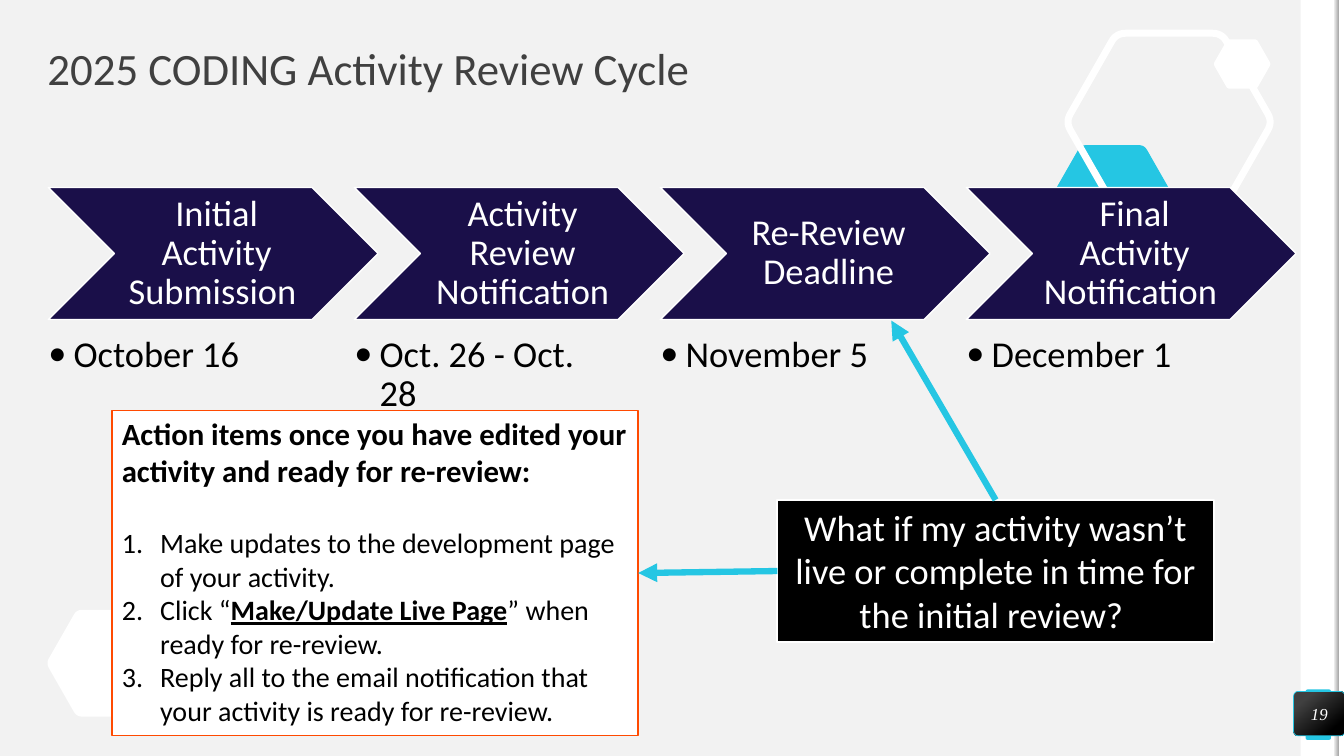
"""Build the activity review cycle slide."""
from lxml.etree import SubElement
from pptx import Presentation
from pptx.dml.color import RGBColor
from pptx.enum.shapes import MSO_CONNECTOR, MSO_SHAPE
from pptx.enum.text import MSO_ANCHOR, PP_ALIGN
from pptx.oxml.ns import qn
from pptx.util import Inches, Pt

TITLE = "2025 CODING Activity Review Cycle"
STAGES = [
    ("Initial Activity Submission ", "October 16"),
    ("Activity Review Notification", "Oct. 26 - Oct. 28"),
    ("Re-Review Deadline", "November 5"),
    ("Final Activity Notification ", "December 1"),
]
QUESTION = "What if my activity wasn’t live or complete in time for the initial review? "
ACTION_HEADING = "Action items once you have edited your activity and ready for re-review:"
ACTIONS = [
    [("Make updates to the development page of your activity.", False)],
    [("Click “", False), ("Make/Update Live Page", True), ("” when ready for re-review.", False)],
    [("Reply all to the email notification that your activity is ready for re-review.", False)],
]
PAGE_NUMBER = "19"

COLORS = {
    "page": "F2F2F2", "white": "FFFFFF", "black": "000000", "cyan": "25C6E3",
    "navy": "1A0F49", "orange": "FF4A01", "title": "404040", "edge": "A6A6A6",
}
HEXAGONS = [
    (0.47, 6.05, 1.21, 1.06, "white", None),
    (10.43, 1.44, 1.21, 1.06, "cyan", None),
    (10.59, 0.33, 2.01, 1.76, None, ("white", 5)),
    (12.04, 0.39, 0.56, 0.49, "white", None),
]
HEXAGON_CORNERS = [(0.24, 0), (0.76, 0), (1.01, 0.5), (0.76, 1), (0.24, 1), (-0.01, 0.5)]
CORNER_CUT = 0.09
CURVE_STEPS = 6

WIDTH, HEIGHT = 13.33, 7.5
STAGE_LEFT, STAGE_TOP, STAGE_STEP = 0.48, 1.86, 3.035
STAGE_WIDTH, STAGE_HEIGHT = 3.27, 1.31
DATE_TOP, DATE_WIDTH, DATE_HEIGHT = 3.33, 2.62, 0.51
NO_INSETS = (0, 0, 0, 0)

deck = Presentation()
deck.slide_width, deck.slide_height = Inches(WIDTH), Inches(HEIGHT)
slide = deck.slides.add_slide(deck.slide_layouts[6])
slide.background.fill.solid()
slide.background.fill.fore_color.rgb = RGBColor.from_string(COLORS["page"])


def paint(shape, fill=None, line=None):
    shape.shadow.inherit = False
    if isinstance(fill, tuple):
        angle, *stops = fill
        shape.fill.gradient()
        shape.fill.gradient_angle = angle
        for stop, (color, position) in zip(shape.fill.gradient_stops, stops):
            stop.color.rgb = RGBColor.from_string(COLORS[color])
            stop.position = position
    elif fill:
        shape.fill.solid()
        shape.fill.fore_color.rgb = RGBColor.from_string(COLORS[fill])
    else:
        shape.fill.background()
    if line:
        shape.line.color.rgb = RGBColor.from_string(COLORS[line[0]])
        shape.line.width = Pt(line[1])
    else:
        shape.line.fill.background()


def add_box(kind, bounds, fill, line=None, corner=None):
    shape = slide.shapes.add_shape(kind, *map(Inches, bounds))
    if corner is not None:
        shape.adjustments[0] = corner
    paint(shape, fill, line)
    return shape


def add_label(bounds):
    return slide.shapes.add_textbox(*map(Inches, bounds))


def set_frame(shape, anchor=MSO_ANCHOR.TOP, insets=(0.1, 0.05, 0.1, 0.05)):
    frame = shape.text_frame
    frame.word_wrap = True
    frame.vertical_anchor = anchor
    frame.margin_left, frame.margin_top, frame.margin_right, frame.margin_bottom = map(Inches, insets)
    return frame


def write(paragraph, text, size, color="black", font="Calibri", bold=False, italic=False, underline=False):
    run = paragraph.add_run()
    run.text = text
    run.font.name, run.font.size = font, Pt(size)
    run.font.bold, run.font.italic, run.font.underline = bold, italic, underline
    run.font.color.rgb = RGBColor.from_string(COLORS[color])


def add_marker(paragraph, indent, tag, **attributes):
    properties = paragraph._p.get_or_add_pPr()
    properties.set("marL", str(Inches(indent)))
    properties.set("indent", str(-Inches(indent)))
    SubElement(properties, qn("a:buFont"), typeface="Calibri")
    SubElement(properties, qn(tag), attributes)


def hexagon_outline(left, top, width, height):
    points = []
    for index, corner in enumerate(HEXAGON_CORNERS):
        before = HEXAGON_CORNERS[index - 1]
        after = HEXAGON_CORNERS[(index + 1) % len(HEXAGON_CORNERS)]
        for step in range(CURVE_STEPS + 1):
            t = step / CURVE_STEPS
            x, y = (
                c + CORNER_CUT * ((1 - t) ** 2 * (b - c) + t ** 2 * (a - c))
                for b, c, a in zip(before, corner, after)
            )
            points.append((Inches(left + x * width), Inches(top + y * height)))
    return points


def add_arrow(start, end):
    arrow = slide.shapes.add_connector(MSO_CONNECTOR.STRAIGHT, *map(Inches, start + end))
    arrow.line.color.rgb = RGBColor.from_string(COLORS["cyan"])
    arrow.line.width = Pt(4.5)
    SubElement(arrow.line._get_or_add_ln(), qn("a:tailEnd"), type="triangle")
    SubElement(arrow._element.spPr, qn("a:effectLst"))
    return arrow


add_box(MSO_SHAPE.RECTANGLE, (12.9, 0, 0.39, HEIGHT), "white")
add_box(MSO_SHAPE.ROUNDED_RECTANGLE, (12.95, 6.84, 0.25, 0.5), "cyan", corner=0.07)
add_box(MSO_SHAPE.RECTANGLE, (13.28, 0, 0.05, HEIGHT), "white")
add_box(MSO_SHAPE.RECTANGLE, (13.23, 0, 0.05, HEIGHT), (0, ("page", 0), ("edge", 1)))
for *bounds, fill, line in HEXAGONS:
    first, *others = hexagon_outline(*bounds)
    builder = slide.shapes.build_freeform(*first)
    builder.add_line_segments(others, close=True)
    paint(builder.convert_to_shape(), fill, line)

title = set_frame(add_label((0.47, 0.47, 12.39, 0.47)), MSO_ANCHOR.MIDDLE, NO_INSETS).paragraphs[0]
title.line_spacing = 0.9
write(title, TITLE, 32, "title")

for column, (stage, date) in enumerate(STAGES):
    left = STAGE_LEFT + column * STAGE_STEP
    chevron = add_box(MSO_SHAPE.CHEVRON, (left, STAGE_TOP, STAGE_WIDTH, STAGE_HEIGHT), "navy", ("white", 1))
    heading = set_frame(chevron, MSO_ANCHOR.MIDDLE, (0.11, 0.04, 0.04, 0.04)).paragraphs[0]
    heading.alignment = PP_ALIGN.CENTER
    heading.line_spacing = 0.9
    write(heading, stage, 26, "white")
    due = set_frame(add_label((left, DATE_TOP, DATE_WIDTH, DATE_HEIGHT)), insets=NO_INSETS).paragraphs[0]
    add_marker(due, 0.25, "a:buChar", char="•")
    due.line_spacing = 0.9
    write(due, date, 26)

badge = add_box(MSO_SHAPE.ROUNDED_RECTANGLE, (12.83, 6.86, 0.51, 0.44),
                (310, ("title", 0.2), ("black", 0.82)), ("cyan", 0.5), 0.1)
number = set_frame(badge, MSO_ANCHOR.MIDDLE, NO_INSETS).paragraphs[0]
number.alignment = PP_ALIGN.CENTER
write(number, PAGE_NUMBER, 12, "white", "Times New Roman", italic=True)

question_box = add_box(MSO_SHAPE.RECTANGLE, (7.71, 4.96, 4.33, 1.41), "black", ("white", 1.5))
question = set_frame(question_box).paragraphs[0]
question.alignment = PP_ALIGN.CENTER
write(question, QUESTION, 26, "white")

action_box = add_box(MSO_SHAPE.RECTANGLE, (1.11, 4.07, 5.22, 3.23), "white", ("orange", 1))
action_frame = set_frame(action_box)
action_frame.paragraphs[0].alignment = PP_ALIGN.LEFT
write(action_frame.paragraphs[0], ACTION_HEADING, 22, bold=True)
for index, parts in enumerate(ACTIONS):
    item = action_frame.add_paragraph()
    add_marker(item, 0.38, "a:buAutoNum", type="arabicPeriod")
    item.alignment = PP_ALIGN.LEFT
    item.space_before = Pt(0 if index else 26)
    for text, strong in parts:
        write(item, text, 20, bold=strong, underline=strong)

to_actions = add_arrow((7.71, 5.67), (6.33, 5.69))
to_actions.begin_connect(question_box, 1)
to_actions.end_connect(action_box, 3)
to_deadline = add_arrow((9.88, 4.96), (8.84, 3.18))
to_deadline.begin_connect(question_box, 0)

deck.save("out.pptx")
